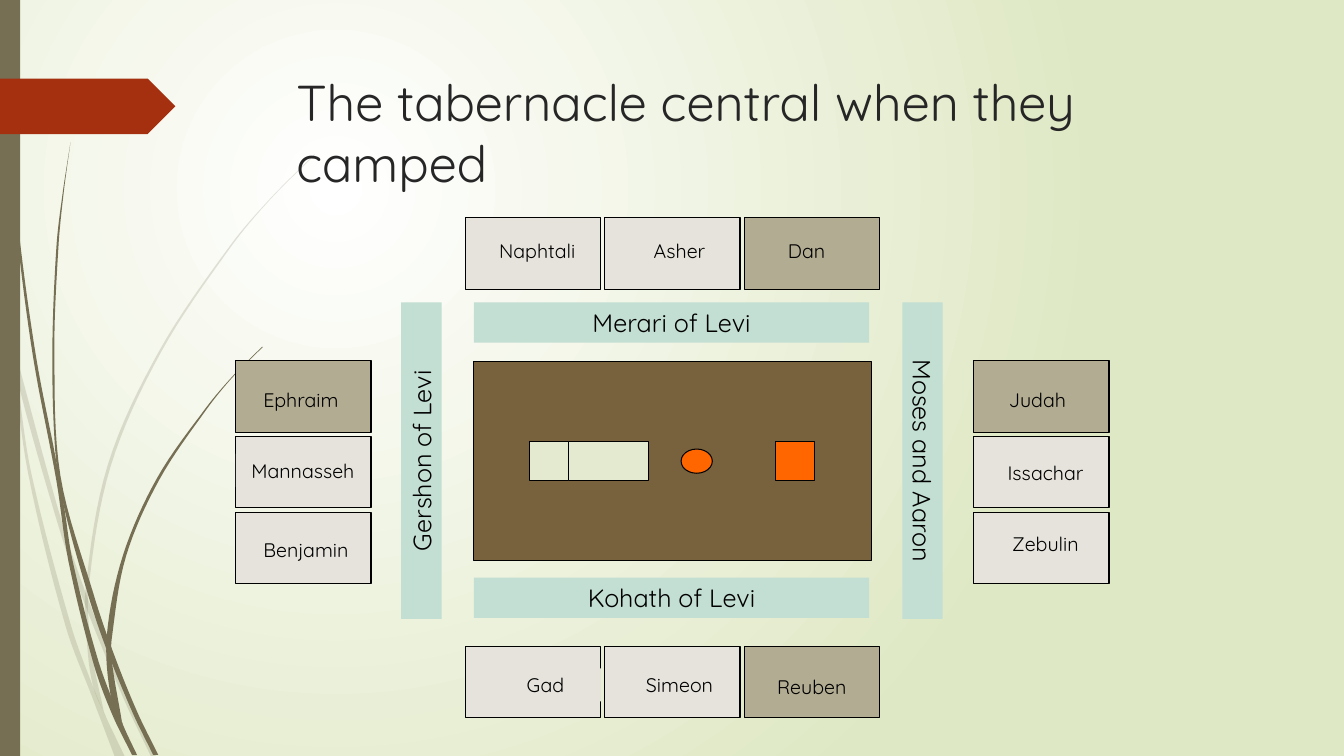
from lxml.etree import SubElement
from pptx import Presentation
from pptx.dml.color import RGBColor
from pptx.enum.shapes import MSO_SHAPE
from pptx.enum.text import MSO_ANCHOR, PP_ALIGN
from pptx.oxml.ns import qn
from pptx.util import Pt

PX = 9144  # 100 px to the inch

COLORS = {
    "white": "FFFFFF", "lime": "DFE8C4", "olive": "766F54", "red": "A53010",
    "court": "77623D", "tent": "E3EACF", "flame": "FF6600", "camp": "E5E3DB",
    "chief": "B2AC93", "levi": "C3DED3", "black": "000000", "title": "262626",
}

TILE_W, TILE_H = 134, 71
STEP_X, STEP_Y = 138, 75

# Each side of the camp: first tile, step, then name, fill, label offset, width, alignment
MID, LEFT = PP_ALIGN.CENTER, PP_ALIGN.LEFT
CAMPS = [
    ((462, 216), (STEP_X, 0), [
        ("Naphtali", "camp", (16, 16), 110, MID),
        ("Asher", "camp", (19, 16), 110, MID),
        ("Dan", "chief", (15, 16), 94, MID)]),
    ((966, 358), (0, STEP_Y), [
        ("Judah", "chief", (16, 22), 94, MID),
        ("Issachar", "camp", (16, 19), 110, MID),
        ("Zebulin", "camp", (16, 15), 110, MID)]),
    ((234, 358), (0, STEP_Y), [
        ("Ephraim", "chief", (15, 22), 99, MID),
        ("Mannasseh", "camp", (0, 17), 133, MID),
        ("Benjamin", "camp", (15, 21), 109, MID)]),
    ((462, 641), (STEP_X, 0), [
        ("Gad", "camp", (24, 22), 110, MID),
        ("Simeon", "camp", (19, 22), 110, MID),
        ("Reuben", "chief", (23, 24), 94, LEFT)]),
]

# Levite clans: text, frame, turn
CLANS = [
    ("Merari of Levi", (470, 300, 392, 40), 0),
    ("Kohath of Levi", (470, 573, 392, 40), 0),
    ("Gershon of Levi", (261, 437, 314, 40), 270),
    ("Moses and Aaron", (758, 437, 314, 40), 90),
]

# Court and what stands in it: kind, frame, fill, turn
COURT = [
    (MSO_SHAPE.RECTANGLE, (470, 359, 394, 197), "court", 0),
    (MSO_SHAPE.RECTANGLE, (525, 438, 118, 39), "tent", 0),
    (MSO_SHAPE.RECTANGLE, (525, 438, 39, 39), "tent", 0),
    (MSO_SHAPE.RECTANGLE, (769, 438, 39, 39), "flame", 0),
    (MSO_SHAPE.OVAL, (679, 442, 24, 31), "flame", 270),
]

# Grass blades: opacity in percent, then the two edges
BLADES = [
    (20, [(0, 299), (11, 350), (28, 470), (65, 621), (92, 693), (114, 751)],
     [(124, 751), (105, 711), (93, 683), (70, 619), (31, 469), (17, 376), (9, 322), (0, 282)]),
    (20, [(14, 345), (17, 376), (58, 522), (84, 599), (123, 694), (150, 751)],
     [(155, 751), (127, 692), (92, 607), (62, 520), (14, 345)]),
    (20, [(312, 153), (268, 197), (228, 244), (158, 348), (107, 461), (85, 584),
          (87, 646), (93, 683), (105, 711)],
     [(103, 706), (91, 646), (88, 584), (110, 462), (160, 349), (229, 245),
      (268, 198), (312, 154)]),
    (100, [(3, 0), (7, 110), (17, 233), (33, 355), (56, 477), (68, 557), (93, 659),
           (111, 708), (131, 749)],
     [(136, 749), (122, 719), (98, 657), (72, 556), (64, 505), (55, 453), (36, 355),
      (19, 232), (8, 109), (4, 0)]),
    (100, [(70, 141), (62, 193), (56, 245), (52, 349), (55, 449), (64, 505), (88, 592),
           (106, 645), (132, 708), (152, 749)],
     [(157, 749), (136, 706), (113, 649), (93, 590), (60, 472), (54, 349), (58, 245),
      (63, 193), (70, 141)]),
    (100, [(260, 344), (231, 373), (204, 405), (156, 474), (122, 551), (106, 631),
           (110, 691), (122, 719)],
     [(121, 716), (111, 656), (111, 633), (125, 552), (158, 476), (205, 406),
      (231, 374), (261, 344)]),
]


def rgb(name):
    return RGBColor.from_string(COLORS[name])


def paint(shape, fill, edge=False):
    shape.shadow.inherit = False
    shape.fill.solid()
    shape.fill.fore_color.rgb = rgb(fill)
    if edge:
        shape.line.color.rgb = rgb("black")
        shape.line.width = Pt(0.75)
    else:
        shape.line.fill.background()


def block(slide, kind, frame, fill, turn=0, edge=False):
    shape = slide.shapes.add_shape(kind, *(n * PX for n in frame))
    shape.rotation = turn
    paint(shape, fill, edge)
    return shape


def write(shape, text, size, color="black", align=MID):
    frame = shape.text_frame
    for key, value in {"word_wrap": True, "vertical_anchor": MSO_ANCHOR.TOP}.items():
        setattr(frame, key, value)
    para = frame.paragraphs[0]
    para.alignment = align
    run = para.add_run()
    run.text = text
    for key, value in {"name": "Quicksand", "size": Pt(size)}.items():
        setattr(run.font, key, value)
    run.font.color.rgb = rgb(color)


def smooth(points, steps=8):
    """Points along a curve through the given ones, in EMU."""
    knots = [complex(*p) for p in points]
    times = [0]
    for a, b in zip(knots, knots[1:]):
        times.append(times[-1] + abs(b - a))
    last = len(knots) - 1
    slopes = []
    for i in range(last + 1):
        lo, hi = max(i - 1, 0), min(i + 1, last)
        slopes.append((knots[hi] - knots[lo]) / (times[hi] - times[lo]))
    curve = [knots[0]]
    for i in range(last):
        span = times[i + 1] - times[i]
        for k in range(1, steps + 1):
            t = k / steps
            curve.append((2 * t**3 - 3 * t**2 + 1) * knots[i]
                         + (t**3 - 2 * t**2 + t) * span * slopes[i]
                         + (3 * t**2 - 2 * t**3) * knots[i + 1]
                         + (t**3 - t**2) * span * slopes[i + 1])
    return [(round(z.real * PX), round(z.imag * PX)) for z in curve]


def blade(slide, alpha, near, far):
    points = smooth(near) + smooth(far)
    form = slide.shapes.build_freeform(*points[0])
    form.add_line_segments(points[1:], close=True)
    shape = form.convert_to_shape()
    paint(shape, "olive")
    if alpha < 100:
        tint = shape.element.spPr.find(qn("a:solidFill"))[0]
        SubElement(tint, qn("a:alpha"), val=str(alpha * 1000))


def backdrop(slide):
    fill = slide.background.fill
    fill.gradient()
    for stop, name in zip(fill.gradient_stops, ("white", "lime")):
        stop.color.rgb = rgb(name)
    grad = next(slide.element.iter(qn("a:gradFill")))
    grad.remove(grad.find(qn("a:lin")))
    glow = SubElement(grad, qn("a:path"), path="circle")
    SubElement(glow, qn("a:fillToRect"), l="50000", t="50000", r="100000", b="100000")


def camp(slide, start, step, tribes):
    for i, (name, fill, shift, width, align) in enumerate(tribes):
        x, y = (s + i * d for s, d in zip(start, step))
        block(slide, MSO_SHAPE.RECTANGLE, (x, y, TILE_W, TILE_H), fill, edge=True)
        label = block(slide, MSO_SHAPE.RECTANGLE,
                      (x + shift[0], y + shift[1], width, 33), fill)
        write(label, name, 14, align=align)


def main():
    deck = Presentation()
    deck.slide_width, deck.slide_height = 1333 * PX, 750 * PX
    slide = deck.slides.add_slide(deck.slide_layouts[6])

    # Backdrop with grass, side bar and flag
    backdrop(slide)
    for item in BLADES:
        blade(slide, *item)
    block(slide, MSO_SHAPE.RECTANGLE, (0, 0, 20, 750), "olive")
    block(slide, MSO_SHAPE.PENTAGON, (0, 78, 174, 55), "red")

    # Tabernacle court
    for item in COURT:
        block(slide, *item, edge=True)

    # Tribes around it
    for side in CAMPS:
        camp(slide, *side)

    # Levites between
    for text, frame, turn in CLANS:
        write(block(slide, MSO_SHAPE.RECTANGLE, frame, "levi", turn), text, 18)

    # Title
    title = slide.shapes.add_textbox(*(n * PX for n in (284, 66, 975, 140)))
    write(title, "The tabernacle central when they camped", 36, "title", LEFT)

    deck.save("out.pptx")


if __name__ == "__main__":
    main()
